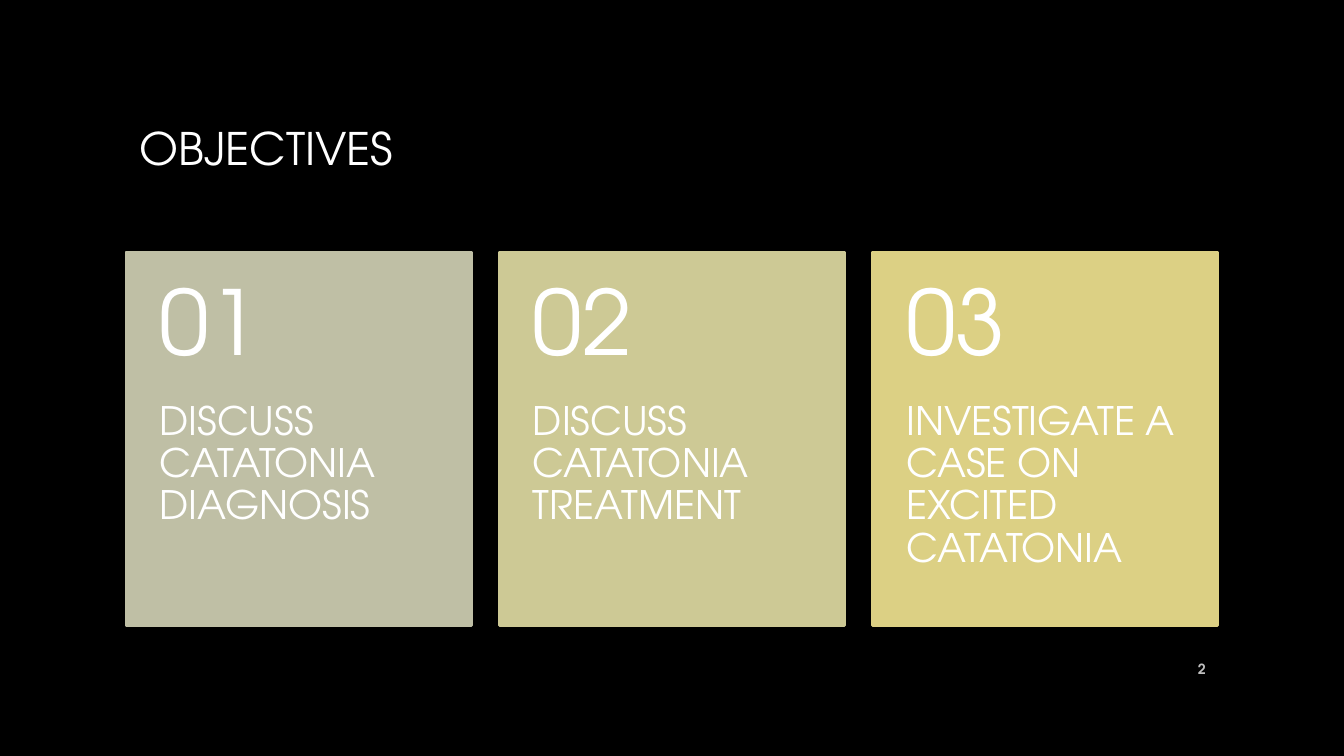
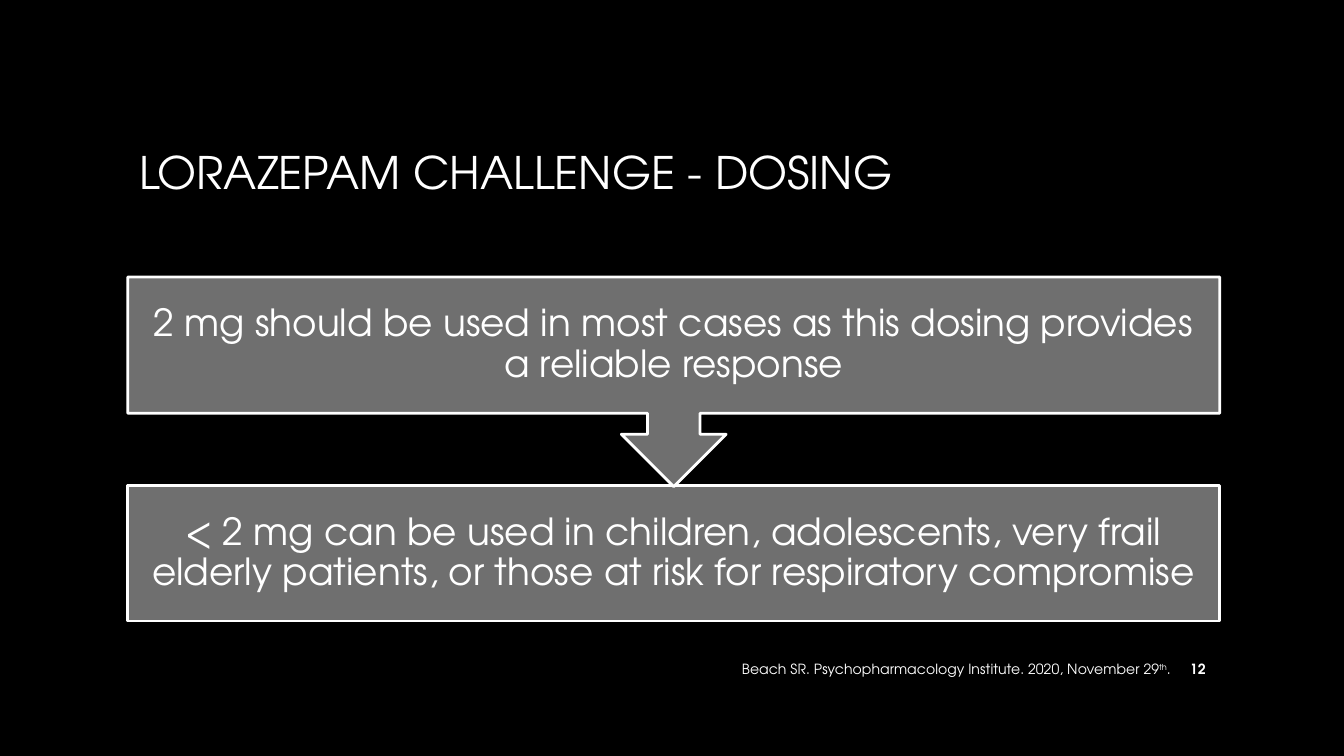
from pptx import Presentation
from pptx.dml.color import RGBColor
from pptx.enum import shapes, text
from pptx.util import Pt

FONT = "TeX Gyre Adventor"
BLACK, WHITE, PALE, GREY = "000000", "FFFFFF", "BFBFBF", "6F6F6F"
LEFT, WIDTH = 67.5, 585
FOOT, FOOT_H = 347.75, 21.6
PAD = (7.2, 3.6, 7.2, 3.6)
ALIGN, ANCHOR = text.PP_ALIGN, text.MSO_ANCHOR
KIND = shapes.MSO_SHAPE


def paint(fmt, color):
    if hasattr(fmt, "solid"):
        fmt.solid()
        fmt.fore_color.rgb = RGBColor.from_string(color)
    else:
        fmt.color.rgb = RGBColor.from_string(color)


def write(frame, runs, size=20, color=WHITE, bold=False, align=ALIGN.LEFT,
          anchor=ANCHOR.MIDDLE, pad=PAD, space=1.0):
    frame.word_wrap = True
    frame.auto_size = text.MSO_AUTO_SIZE.NONE
    frame.vertical_anchor = anchor
    (frame.margin_left, frame.margin_top,
     frame.margin_right, frame.margin_bottom) = map(Pt, pad)
    para = frame.paragraphs[0]
    para.alignment = align
    para.line_spacing = space
    for words, raised in [(runs, False)] if isinstance(runs, str) else runs:
        run = para.add_run()
        run.text = words
        run.font.name = FONT
        run.font.size = Pt(size)
        run.font.bold = bold
        paint(run.font, color)
        if raised:
            run.font._element.set("baseline", "30000")


def label(slide, area, runs, **form):
    box = slide.shapes.add_textbox(*map(Pt, area))
    write(box.text_frame, runs, **form)


def block(slide, kind, area, fill, line):
    shape = slide.shapes.add_shape(kind, *map(Pt, area))
    shape.shadow.inherit = False
    paint(shape.fill, fill)
    paint(shape.line, line)
    shape.line.width = Pt(1.5)
    return shape


def start(deck, title, high, page, shade):
    slide = deck.slides.add_slide(deck.slide_layouts[5])
    head = slide.shapes.title
    head.left, head.top, head.width, head.height = map(
        Pt, (LEFT, 36, WIDTH, high))
    write(head.text_frame, title, size=24)
    label(slide, (620.5, FOOT, 32.5, FOOT_H), page,
          size=7.5, color=shade, bold=True, align=ALIGN.RIGHT)
    return slide


def card(slide, index, goal, fill):
    left, top, wide, high, split = LEFT + 200 * index, 135, 185, 200, 80
    block(slide, KIND.RECTANGLE, (left, top, wide, high), fill, fill)
    label(slide, (left, top, wide, split), f"{index + 1:02}",
          size=48, pad=(18, 13, 18, 13), space=0.9)
    label(slide, (left, top + split, wide, high - split), goal,
          size=21, anchor=ANCHOR.TOP, pad=(18, 0, 18, 26), space=0.9)


def goals(deck):
    slide = start(deck, "OBJECTIVES", 86.4, "2", PALE)
    cards = [
        ("DISCUSS CATATONIA DIAGNOSIS", "BFBFA5"),
        ("DISCUSS CATATONIA TREATMENT", "CDC995"),
        ("INVESTIGATE A CASE ON EXCITED CATATONIA", "DCD084"),
    ]
    for index, (goal, fill) in enumerate(cards):
        card(slide, index, goal, fill)


def doses(deck):
    slide = start(deck, "LORAZEPAM CHALLENGE - DOSING", 112.3, "12", WHITE)
    left, top, high = 68.4, 148.4, 72.8
    form = dict(align=ALIGN.CENTER, pad=(11.5,) * 4, space=0.9)
    lower = block(slide, KIND.RECTANGLE, (left, 260, WIDTH, high), GREY, WHITE)
    write(lower.text_frame,
          "< 2 mg can be used in children, adolescents, very frail elderly "
          "patients, or those at risk for respiratory compromise", **form)
    upper = block(slide, KIND.UP_ARROW_CALLOUT, (left, top, WIDTH, 112.3),
                  GREY, WHITE)
    upper.rotation = 180
    label(slide, (left, top, WIDTH, high),
          "2 mg should be used in most cases as this dosing provides "
          "a reliable response", **form)
    cite = [("Beach SR. Psychopharmacology Institute. 2020, November 29", False),
            ("th", True), (".", False)]
    label(slide, (251.3, FOOT, 383, FOOT_H), cite,
          size=7.5, align=ALIGN.RIGHT)


def main():
    deck = Presentation()
    deck.slide_width, deck.slide_height = Pt(720), Pt(405)
    paint(deck.slide_master.background.fill, BLACK)
    goals(deck)
    doses(deck)
    deck.save("out.pptx")


if __name__ == "__main__":
    main()
